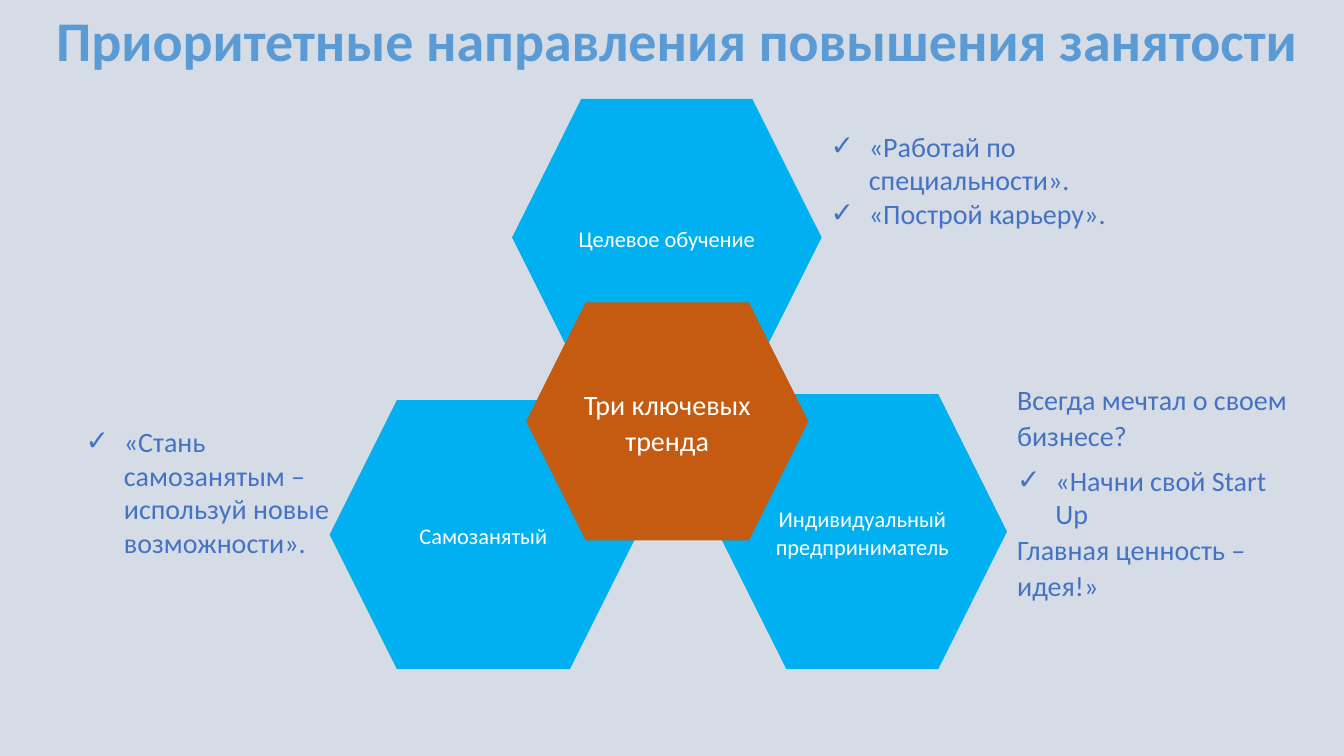
"""Build the slide on priority directions for raising employment."""
from dataclasses import dataclass

import pptx
import pptx.dml.color
import pptx.enum.shapes
import pptx.enum.text
import pptx.oxml.ns
import pptx.shapes.base
import pptx.slide
import pptx.text.text
import pptx.util
from lxml import etree

RGB = pptx.dml.color.RGBColor.from_string
ALIGN = pptx.enum.text.PP_ALIGN
ANCHOR = pptx.enum.text.MSO_ANCHOR
SLIDE_WIDTH = pptx.util.Inches(13.333)
SLIDE_HEIGHT = pptx.util.Inches(7.5)


@dataclass(frozen=True)
class Theme:
    font: str = "Calibri"
    background: str = "D6DCE5"
    title: str = "5B9BD5"
    body: str = "4472C4"
    on_fill: str = "FFFFFF"
    trend: str = "00B0F0"
    core: str = "C55A11"
    title_size: int = 40
    body_size: int = 20
    label_size: int = 16
    line_spacing: float = 1.07
    space_after: int = 8
    bullet_indent: float = 0.38


@dataclass(frozen=True)
class Box:
    """Percentages of the slide's width and height."""
    left: float
    top: float
    width: float
    height: float


@dataclass(frozen=True)
class Hexagon:
    text: str
    box: Box
    fill: str
    size: int


@dataclass(frozen=True)
class Line:
    text: str
    checked: bool = True


@dataclass(frozen=True)
class Note:
    placeholder: int
    box: Box
    lines: tuple[Line, ...]


THEME = Theme()
TITLE_BOX = Box(2.93, 0, 95.78, 10.27)
HEXAGONS = (
    Hexagon("Целевое обучение", Box(38.1, 13.07, 23.03, 36.67), THEME.trend, THEME.label_size),
    Hexagon("Самозанятый", Box(24.53, 52.93, 22.88, 35.6), THEME.trend, THEME.label_size),
    Hexagon("Индивидуальный предприниматель", Box(53.4, 52.13, 21.53, 36.4),
            THEME.trend, THEME.label_size),
    Hexagon("Три ключевых тренда", Box(39.15, 40, 21, 31.47), THEME.core, THEME.body_size),
)
NOTES = (
    Note(1, Box(61.05, 16.4, 29.48, 19.73),
         (Line("«Работай по специальности»."), Line("«Построй карьеру»."))),
    Note(2, Box(5.62, 55.47, 21.53, 14.67),
         (Line("«Стань самозанятым – используй новые возможности»."),)),
    Note(3, Box(74.93, 49.6, 22.6, 34.53),
         (Line("Всегда мечтал о своем бизнесе?", False),
          Line("«Начни свой Start Up"),
          Line("Главная ценность – идея!»", False))),
)


def place(shape: pptx.shapes.base.BaseShape, box: Box) -> None:
    shape.left = int(SLIDE_WIDTH * box.left / 100)
    shape.top = int(SLIDE_HEIGHT * box.top / 100)
    shape.width = int(SLIDE_WIDTH * box.width / 100)
    shape.height = int(SLIDE_HEIGHT * box.height / 100)


def set_font(paragraph: pptx.text.text._Paragraph, size: int, color: str,
             bold: bool = False) -> None:
    paragraph.font.name = THEME.font
    paragraph.font.size = pptx.util.Pt(size)
    paragraph.font.bold = bold
    paragraph.font.color.rgb = RGB(color)


def set_spacing(paragraph: pptx.text.text._Paragraph, loose: bool) -> None:
    paragraph.line_spacing = THEME.line_spacing if loose else 1.0
    paragraph.space_before = pptx.util.Pt(0)
    paragraph.space_after = pptx.util.Pt(THEME.space_after if loose else 0)


def set_bullet(paragraph: pptx.text.text._Paragraph, checked: bool) -> None:
    properties = paragraph._p.get_or_add_pPr()
    indent = pptx.util.Inches(THEME.bullet_indent) if checked else 0
    properties.set("marL", str(indent))
    properties.set("indent", str(-indent))
    qualified = pptx.oxml.ns.qn
    if checked:
        etree.SubElement(properties, qualified("a:buFont"), typeface=THEME.font)
        etree.SubElement(properties, qualified("a:buChar"), char="✓")
    else:
        etree.SubElement(properties, qualified("a:buNone"))


def add_title(slide: pptx.slide.Slide) -> None:
    title = slide.shapes.title
    place(title, TITLE_BOX)
    frame = title.text_frame
    frame.text = "Приоритетные направления повышения занятости "
    frame.word_wrap = False
    frame.auto_size = pptx.enum.text.MSO_AUTO_SIZE.NONE
    frame.vertical_anchor = ANCHOR.TOP
    frame.paragraphs[0].alignment = ALIGN.CENTER
    set_font(frame.paragraphs[0], THEME.title_size, THEME.title, bold=True)


def add_hexagon(slide: pptx.slide.Slide, hexagon: Hexagon) -> None:
    shape = slide.shapes.add_shape(pptx.enum.shapes.MSO_SHAPE.HEXAGON, 0, 0, 0, 0)
    place(shape, hexagon.box)
    shape.shadow.inherit = False
    shape.fill.solid()
    shape.fill.fore_color.rgb = RGB(hexagon.fill)
    shape.line.fill.background()
    frame = shape.text_frame
    frame.text = hexagon.text
    frame.word_wrap = True
    frame.vertical_anchor = ANCHOR.MIDDLE
    paragraph = frame.paragraphs[0]
    paragraph.alignment = ALIGN.CENTER
    set_spacing(paragraph, loose=True)
    set_font(paragraph, hexagon.size, THEME.on_fill)


def add_note(slide: pptx.slide.Slide, note: Note) -> None:
    body = slide.placeholders[note.placeholder]
    place(body, note.box)
    frame = body.text_frame
    frame.text = "\n".join(line.text for line in note.lines)
    frame.word_wrap = True
    frame.auto_size = pptx.enum.text.MSO_AUTO_SIZE.NONE
    frame.vertical_anchor = ANCHOR.TOP
    for paragraph, line in zip(frame.paragraphs, note.lines):
        paragraph.alignment = ALIGN.LEFT
        set_spacing(paragraph, loose=not line.checked)
        set_bullet(paragraph, line.checked)
        set_font(paragraph, THEME.body_size, THEME.body)


def main() -> None:
    presentation = pptx.Presentation()
    presentation.slide_width = SLIDE_WIDTH
    presentation.slide_height = SLIDE_HEIGHT
    comparison = presentation.slide_layouts.get_by_name("Comparison")
    slide = presentation.slides.add_slide(comparison)
    slide.background.fill.solid()
    slide.background.fill.fore_color.rgb = RGB(THEME.background)
    add_title(slide)
    for hexagon in HEXAGONS:
        add_hexagon(slide, hexagon)
    for note in NOTES:
        add_note(slide, note)
    for placeholder in list(slide.placeholders):
        if not placeholder.text_frame.text:
            placeholder.element.getparent().remove(placeholder.element)
    presentation.save("out.pptx")


if __name__ == "__main__":
    main()
